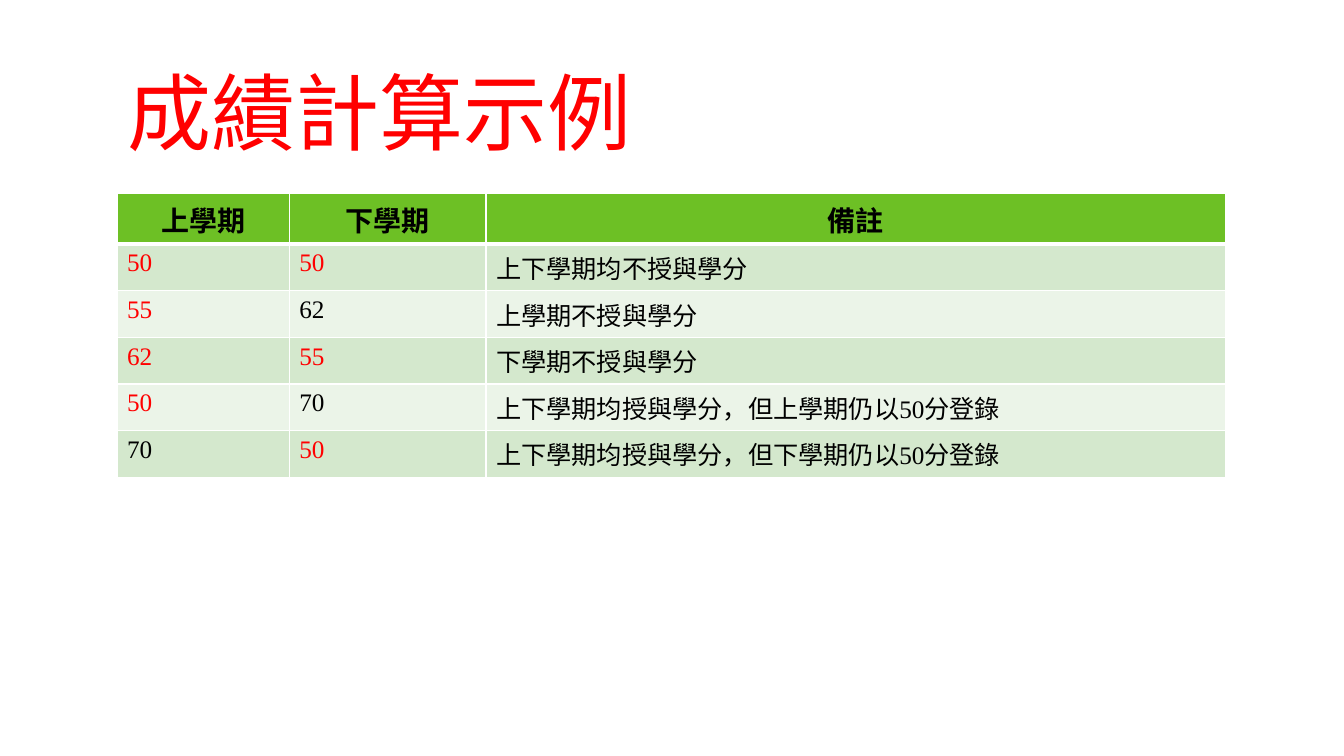
import dataclasses

import lxml.etree
import pptx
import pptx.dml.color
import pptx.enum.text
import pptx.oxml.ns
import pptx.presentation
import pptx.slide
import pptx.table
import pptx.text.text
import pptx.util

Inches = pptx.util.Inches
RGBColor = pptx.dml.color.RGBColor
Alignment = pptx.enum.text.PP_ALIGN
qn = pptx.oxml.ns.qn

RED = RGBColor(0xFF, 0x00, 0x00)
BLACK = RGBColor(0x00, 0x00, 0x00)
WHITE = RGBColor(0xFF, 0xFF, 0xFF)
HEADER_GREEN = RGBColor(0x6D, 0xC0, 0x25)
BAND_GREENS = (RGBColor(0xD4, 0xE8, 0xCD), RGBColor(0xEB, 0xF4, 0xE8))

CHINESE_FONT = "Noto Sans CJK SC"
LATIN_FONT = "Times New Roman"

LEFT = Inches(1.16)
WIDTH = Inches(11)
COLUMN_WIDTHS = (Inches(1.71), Inches(1.95), Inches(7.34))
ROW_HEIGHT = Inches(0.41)


@dataclasses.dataclass(frozen=True)
class TextStyle:
    size: int
    color: RGBColor
    latin: str = CHINESE_FONT
    bold: bool = False
    alignment: Alignment = Alignment.LEFT


@dataclasses.dataclass(frozen=True)
class GradeExample:
    first_term: str
    second_term: str
    remark: str
    first_color: RGBColor = BLACK
    second_color: RGBColor = BLACK


TITLE_STYLE = TextStyle(60, RED)
HEADER_STYLE = TextStyle(20, BLACK, bold=True, alignment=Alignment.CENTER)
HEADERS = ("上學期", "下學期", "備註")
EXAMPLES = (
    GradeExample("50", "50", "上下學期均不授與學分", RED, RED),
    GradeExample("55", "62", "上學期不授與學分", first_color=RED),
    GradeExample("62", "55", "下學期不授與學分", RED, RED),
    GradeExample("50", "70", "上下學期均授與學分，但上學期仍以50分登錄", first_color=RED),
    GradeExample("70", "50", "上下學期均授與學分，但下學期仍以50分登錄", second_color=RED),
)


def write_text(frame: pptx.text.text.TextFrame, text: str, style: TextStyle) -> None:
    frame.text = text
    paragraph = frame.paragraphs[0]
    paragraph.alignment = style.alignment
    font = paragraph.font
    font.size = pptx.util.Pt(style.size)
    font.bold = style.bold
    font.name = style.latin
    font.color.rgb = style.color
    properties = paragraph._p.get_or_add_pPr().get_or_add_defRPr()
    east_asian = lxml.etree.SubElement(properties, qn("a:ea"))
    east_asian.set("typeface", CHINESE_FONT)


def set_borders(cell: pptx.table._Cell, bottom: int) -> None:
    properties = cell._tc.get_or_add_tcPr()
    widths = {"a:lnL": 1, "a:lnR": 1, "a:lnT": 1, "a:lnB": bottom}
    for index, (tag, width) in enumerate(widths.items()):
        line = lxml.etree.Element(qn(tag), w=str(pptx.util.Pt(width)))
        fill = lxml.etree.SubElement(line, qn("a:solidFill"))
        lxml.etree.SubElement(fill, qn("a:srgbClr"), val=str(WHITE))
        properties.insert(index, line)


def fill_cell(cell: pptx.table._Cell, text: str, style: TextStyle,
              color: RGBColor, bottom: int = 1) -> None:
    write_text(cell.text_frame, text, style)
    cell.fill.solid()
    cell.fill.fore_color.rgb = color
    set_borders(cell, bottom)


def add_title(slide: pptx.slide.Slide) -> None:
    title = slide.shapes.title
    title.left, title.top = LEFT, Inches(0.33)
    title.width, title.height = WIDTH, Inches(1.33)
    frame = title.text_frame
    frame.auto_size = pptx.enum.text.MSO_AUTO_SIZE.NONE
    frame.vertical_anchor = pptx.enum.text.MSO_ANCHOR.BOTTOM
    write_text(frame, "成績計算示例", TITLE_STYLE)
    frame.paragraphs[0].line_spacing = 0.9


def add_grade_table(slide: pptx.slide.Slide) -> None:
    row_count = len(EXAMPLES) + 1
    table = slide.shapes.add_table(row_count, len(HEADERS), LEFT, Inches(1.92),
                                   WIDTH, ROW_HEIGHT * row_count).table
    for column, width in zip(table.columns, COLUMN_WIDTHS):
        column.width = width
    for column, header in enumerate(HEADERS):
        fill_cell(table.cell(0, column), header, HEADER_STYLE, HEADER_GREEN, bottom=3)
    for row, example in enumerate(EXAMPLES, start=1):
        band = BAND_GREENS[(row - 1) % 2]
        entries = (
            (example.first_term, example.first_color),
            (example.second_term, example.second_color),
            (example.remark, BLACK),
        )
        for column, (text, color) in enumerate(entries):
            fill_cell(table.cell(row, column), text, TextStyle(18, color, LATIN_FONT), band)


def main() -> None:
    presentation = pptx.Presentation()
    presentation.slide_width = Inches(13.33)
    presentation.slide_height = Inches(7.5)
    slide = presentation.slides.add_slide(presentation.slide_layouts.get_by_name("Title Only"))
    add_title(slide)
    add_grade_table(slide)
    presentation.save("out.pptx")


if __name__ == "__main__":
    main()
